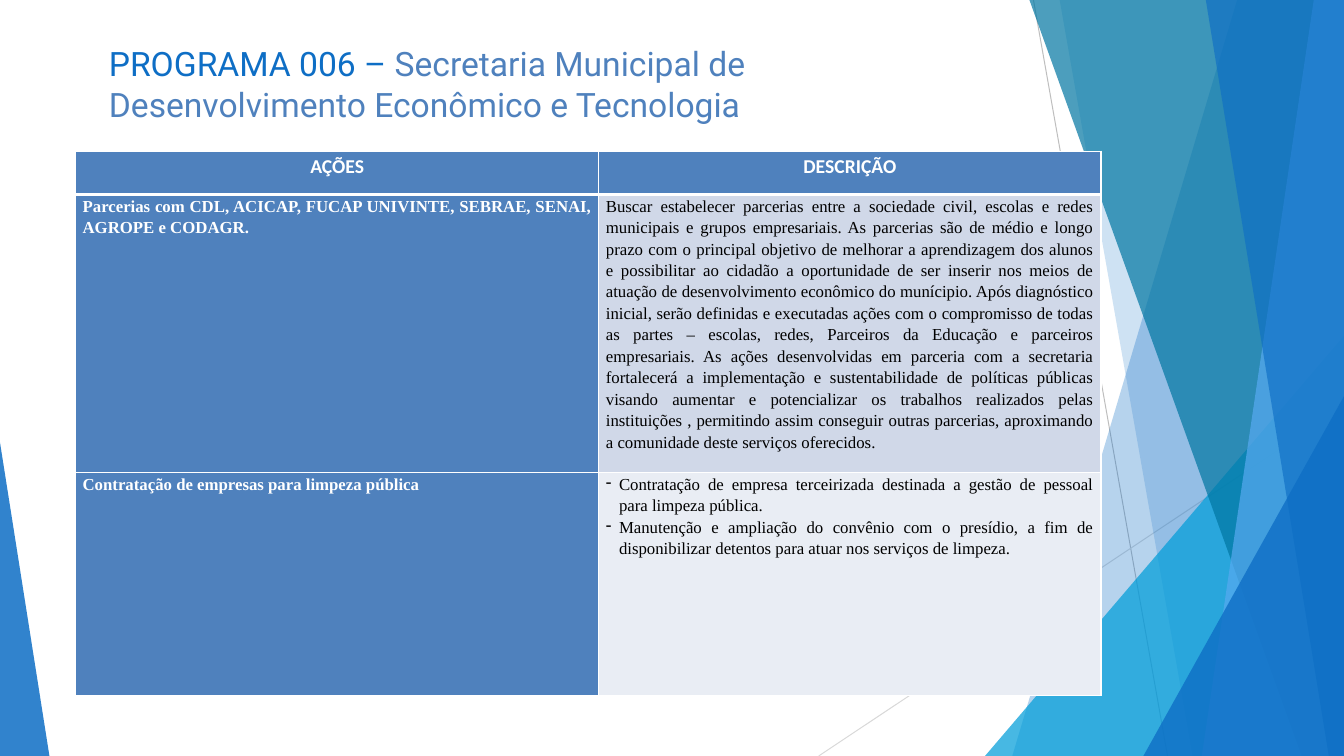
"""Build the slide on Programa 006 with its table of actions."""
from dataclasses import dataclass

from lxml import etree
from pptx import Presentation
from pptx.dml.color import RGBColor
from pptx.enum.shapes import MSO_CONNECTOR
from pptx.enum.text import MSO_ANCHOR, MSO_AUTO_SIZE, PP_ALIGN
from pptx.oxml.ns import qn
from pptx.util import Inches, Pt

LINE = MSO_CONNECTOR.STRAIGHT
TOP = MSO_ANCHOR.TOP
FIXED = MSO_AUTO_SIZE.NONE
LEFT, CENTER, JUSTIFY = PP_ALIGN.LEFT, PP_ALIGN.CENTER, PP_ALIGN.JUSTIFY
WIDE, HIGH = 13.33, 7.5


@dataclass(frozen=True)
class Theme:
    """Colours, fonts and type sizes."""
    blue: str = "0E6EC5"
    cyan: str = "009DD9"
    teal: str = "0076A2"
    sky: str = "58AAF1"
    steel: str = "4F81BD"
    band: str = "D0D8E8"
    pale: str = "E9EDF4"
    white: str = "FFFFFF"
    black: str = "000000"
    gray: str = "BEBEBE"
    mist: str = "D9D9D9"
    title: str = "Roboto"
    head: str = "Calibri"
    body: str = "Times New Roman"
    big: int = 24
    mid: int = 14
    small: int = 12


THEME = Theme()

RAYS = [
    (THEME.blue, 30, [(WIDE, 0), (12.27, 0), (10.04, HIGH), (WIDE, HIGH)]),
    (THEME.blue, 20, [(WIDE, 0), (10.51, 0), (11.83, HIGH), (WIDE, HIGH)]),
    (THEME.cyan, 72, [(WIDE, 3.33), (9.77, HIGH), (WIDE, HIGH)]),
    (THEME.teal, 70, [(WIDE, 0), (10.21, 0), (12.91, HIGH), (WIDE, HIGH)]),
    (THEME.sky, 70, [(WIDE, 0), (13.03, 0), (11.92, HIGH), (WIDE, HIGH)]),
    (THEME.blue, 65, [(WIDE, 0), (11.96, 0), (13.18, HIGH), (WIDE, HIGH)]),
    (THEME.blue, 80, [(WIDE, 3.93), (11.34, HIGH), (WIDE, HIGH)]),
    (THEME.blue, 85, [(0, 4.39), (0, HIGH), (0.49, HIGH)]),
]

HEADS = ["AÇÕES", "DESCRIÇÃO"]
ROWS = [
    ("Parcerias com CDL, ACICAP, FUCAP UNIVINTE, SEBRAE, SENAI, "
     "AGROPE e CODAGR.",
     ["Buscar estabelecer parcerias entre a sociedade civil, escolas e redes "
      "municipais e grupos empresariais. As parcerias são de médio e longo "
      "prazo com o principal objetivo de melhorar a aprendizagem dos alunos "
      "e possibilitar ao cidadão a oportunidade de ser inserir nos meios de "
      "atuação de desenvolvimento econômico do munícipio. Após diagnóstico "
      "inicial, serão definidas e executadas ações com o compromisso de "
      "todas as partes – escolas, redes, Parceiros da Educação e parceiros "
      "empresariais. As ações desenvolvidas em parceria com a secretaria "
      "fortalecerá a implementação e sustentabilidade de políticas públicas "
      "visando aumentar e potencializar os trabalhos realizados pelas "
      "instituições , permitindo assim conseguir outras parcerias, "
      "aproximando a comunidade deste serviços oferecidos."],
     THEME.band),
    ("Contratação de empresas para limpeza pública",
     ["Contratação de empresa terceirizada destinada a gestão de pessoal "
      "para limpeza pública.",
      "Manutenção e ampliação do convênio com o presídio, a fim de "
      "disponibilizar detentos para atuar nos serviços de limpeza."],
     THEME.pale),
]


def rgb(tone):
    """Turn a hex tone into a colour."""
    return RGBColor.from_string(tone)


def style(font, face, size, tone, bold=False):
    """Set face, size, colour and weight of a font."""
    font.name, font.size, font.bold = face, Pt(size), bold
    font.color.rgb = rgb(tone)


def add_line(slide, ends, tone):
    """Draw a thin line between two points."""
    line = slide.shapes.add_connector(LINE, *[Inches(n) for n in ends])
    line.line.color.rgb = rgb(tone)
    line.line.width = Pt(0.72)
    etree.SubElement(line._element.spPr, qn("a:effectLst"))


def add_ray(slide, tone, alpha, points):
    """Draw a see-through polygon."""
    spots = [(Inches(x), Inches(y)) for x, y in points]
    form = slide.shapes.build_freeform(*spots[0])
    form.add_line_segments(spots[1:], close=True)
    ray = form.convert_to_shape()
    ray.shadow.inherit = False
    ray.fill.solid()
    ray.fill.fore_color.rgb = rgb(tone)
    ray.line.fill.background()
    color = ray._element.spPr.find(".//" + qn("a:srgbClr"))
    etree.SubElement(color, qn("a:alpha"), val=str(alpha * 1000))


def add_edge(cell, side, width):
    """Draw one white border of a cell."""
    edge = etree.SubElement(cell._tc.get_or_add_tcPr(), qn("a:ln" + side),
                            w=str(Pt(width)))
    fill = etree.SubElement(edge, qn("a:solidFill"))
    etree.SubElement(fill, qn("a:srgbClr"), val=THEME.white)


def add_dash(para):
    """Give a paragraph a hanging dash."""
    props = para._p.get_or_add_pPr()
    gap = Inches(0.13)
    props.set("marL", str(gap))
    props.set("indent", str(-gap))
    etree.SubElement(props, qn("a:buChar"), char="-")


def fill_cell(cell, lines, fill, tone, head=False, first=False):
    """Write, pad, fill and border one cell."""
    for side in "LRTB":
        thick = (head and side == "B") or (first and side == "T")
        add_edge(cell, side, 3 if thick else 1)
    cell.fill.solid()
    cell.fill.fore_color.rgb = rgb(fill)
    cell.vertical_anchor = TOP
    cell.margin_left = cell.margin_right = Inches(0.03 if head else 0.07)
    cell.margin_top = cell.margin_bottom = 0
    frame = cell.text_frame
    frame.text = "\n".join(lines)
    face, size = (THEME.head, THEME.mid) if head else (THEME.body, THEME.small)
    for para in frame.paragraphs:
        para.alignment = CENTER if head else JUSTIFY
        para.line_spacing = 1.15
        if len(lines) > 1:
            add_dash(para)
        style(para.font, face, size, tone, tone == THEME.white)


def add_grid(slide):
    """Add the table of actions."""
    wides, highs = [5.19, 4.98], [0.43, 2.76, 2.21]
    frame = slide.shapes.add_table(
        len(highs), len(wides), Inches(0.75), Inches(1.5),
        Inches(sum(wides)), Inches(sum(highs)))
    grid = frame.table
    grid.horz_banding = False
    for col, wide in zip(grid.columns, wides):
        col.width = Inches(wide)
    for row, high in zip(grid.rows, highs):
        row.height = Inches(high)
    for col, text in enumerate(HEADS):
        fill_cell(grid.cell(0, col), [text], THEME.steel, THEME.white, True)
    for row, (name, lines, fill) in enumerate(ROWS, 1):
        first = row == 1
        fill_cell(grid.cell(row, 0), [name], THEME.steel, THEME.white,
                  first=first)
        fill_cell(grid.cell(row, 1), lines, fill, THEME.black, first=first)


def set_title(slide):
    """Place and write the title."""
    title = slide.shapes.title
    title.left, title.top = Inches(1.08), Inches(0.42)
    title.width, title.height = Inches(8.73), Inches(0.82)
    frame = title.text_frame
    frame.word_wrap, frame.auto_size = True, FIXED
    frame.vertical_anchor = TOP
    frame.margin_left = frame.margin_right = frame.margin_bottom = 0
    frame.margin_top = Inches(0.01)
    para = frame.paragraphs[0]
    para.alignment = LEFT
    style(para.font, THEME.title, THEME.big, THEME.blue)
    para.add_run().text = "PROGRAMA 006 – "
    name = para.add_run()
    name.text = "Secretaria Municipal de Desenvolvimento Econômico e Tecnologia"
    name.font.color.rgb = rgb(THEME.steel)


def main():
    """Build and save the slide."""
    deck = Presentation()
    deck.slide_width, deck.slide_height = Inches(WIDE), Inches(HIGH)
    slide = deck.slides.add_slide(deck.slide_layouts.get_by_name("Title Only"))
    set_title(slide)
    add_line(slide, (10.25, 0, 11.58, HIGH), THEME.gray)
    add_line(slide, (WIDE, 4.03, 8.12, HIGH), THEME.mist)
    for ray in RAYS:
        add_ray(slide, *ray)
    add_grid(slide)
    deck.save("out.pptx")


if __name__ == "__main__":
    main()
